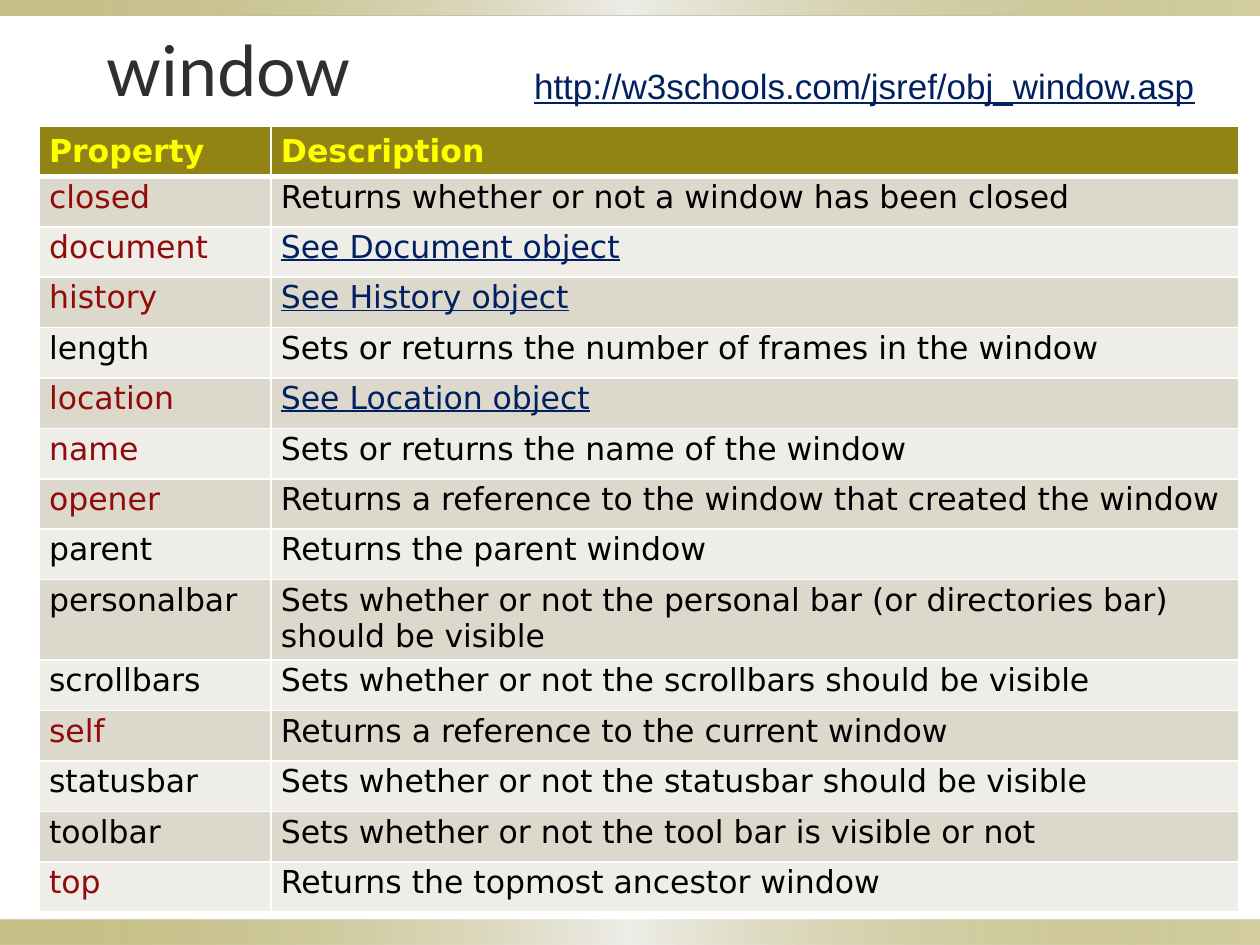
from typing import NamedTuple

from lxml.etree import SubElement
from pptx import Presentation
from pptx.dml.color import RGBColor
from pptx.enum.shapes import MSO_SHAPE
from pptx.enum.text import MSO_ANCHOR, MSO_AUTO_SIZE
from pptx.oxml import parse_xml
from pptx.oxml.ns import nsdecls, qn
from pptx.util import Inches, Pt

WIDTH, HEIGHT = 10, 7.5
ROW_HEIGHT, TALL_ROW_HEIGHT = 0.4, 0.64
COLUMN_WIDTHS = (1.84, 7.68)
COLORS = {
    "olive": "918415",
    "pale": "EEEDE8",
    "sand": "DCD9CC",
    "white": "FFFFFF",
    "yellow": "FFFF00",
    "title": "2F2F2F",
    "red": "900B09",
    "black": "000000",
    "link": "002060",
}


class Stop(NamedTuple):
    position: int
    color: str
    opacity: int


class Label(NamedTuple):
    text: str
    left: float
    top: float
    width: float
    height: float
    font: str
    size: int
    color: str
    underline: bool = False
    wrap: bool = True
    anchor: MSO_ANCHOR = MSO_ANCHOR.TOP


class Property(NamedTuple):
    name: str
    description: str
    name_color: str = "black"
    is_link: bool = False
    height: float = ROW_HEIGHT


BAND_STOPS = (Stop(0, "olive", 50), Stop(50, "pale", 100), Stop(100, "olive", 40))
BANDS = ((0, 0.12), (7.3, 0.2))

LABELS = (
    Label("window", 0.75, 0.25, 9, 0.59, "Lato", 40, "title", anchor=MSO_ANCHOR.MIDDLE),
    Label("http://w3schools.com/jsref/obj_window.asp", 4.14, 0.46, 5.48, 0.44,
          "Arial", 20, "link", underline=True, wrap=False),
)

PROPERTIES = (
    Property("closed", "Returns whether or not a window has been closed", "red"),
    Property("document", "See Document object", "red", is_link=True),
    Property("history", "See History object", "red", is_link=True),
    Property("length", "Sets or returns the number of frames in the window"),
    Property("location", "See Location object", "red", is_link=True),
    Property("name", "Sets or returns the name of the window", "red"),
    Property("opener", "Returns a reference to the window that created the window", "red"),
    Property("parent", "Returns the parent window"),
    Property("personalbar",
             "Sets whether or not the personal bar (or directories bar) should be visible",
             height=TALL_ROW_HEIGHT),
    Property("scrollbars", "Sets whether or not the scrollbars should be visible"),
    Property("self", "Returns a reference to the current window", "red"),
    Property("statusbar", "Sets whether or not the statusbar should be visible"),
    Property("toolbar", "Sets whether or not the tool bar is visible or not"),
    Property("top", "Returns the topmost ancestor window", "red"),
)


def rgb(name: str) -> RGBColor:
    return RGBColor.from_string(COLORS[name])


def style_font(font, family: str, size: int, color: str,
               bold: bool = False, underline: bool = False) -> None:
    font.name, font.size = family, Pt(size)
    font.bold, font.underline = bold, underline
    font.color.rgb = rgb(color)


def add_band(page, top: float, height: float) -> None:
    """Draw a full-width bar with a left-to-right translucent gradient."""
    band = page.shapes.add_shape(MSO_SHAPE.RECTANGLE, 0, Inches(top),
                                 Inches(WIDTH), Inches(height))
    band.shadow.inherit = False
    band.line.fill.background()
    band.fill.gradient()
    band.fill.gradient_angle = 0
    stop_list = band.fill._fill._gradFill.find(qn("a:gsLst"))
    stop_list.clear()
    for stop in BAND_STOPS:
        entry = SubElement(stop_list, qn("a:gs"), pos=str(stop.position * 1000))
        color = SubElement(entry, qn("a:srgbClr"), val=COLORS[stop.color])
        SubElement(color, qn("a:alpha"), val=str(stop.opacity * 1000))


def add_label(page, label: Label) -> None:
    box = page.shapes.add_textbox(Inches(label.left), Inches(label.top),
                                  Inches(label.width), Inches(label.height))
    frame = box.text_frame
    frame.word_wrap = label.wrap
    frame.auto_size = MSO_AUTO_SIZE.NONE if label.wrap else MSO_AUTO_SIZE.SHAPE_TO_FIT_TEXT
    frame.vertical_anchor = label.anchor
    para = frame.paragraphs[0]
    para.text = label.text
    style_font(para.font, label.font, label.size, label.color, underline=label.underline)


def set_borders(cell, top: int, bottom: int) -> None:
    properties = cell._tc.get_or_add_tcPr()
    for index, (side, points) in enumerate(zip("LRTB", (1, 1, top, bottom))):
        properties.insert(index, parse_xml(
            f'<a:ln{side} {nsdecls("a")} w="{Pt(points)}"><a:solidFill>'
            f'<a:srgbClr val="{COLORS["white"]}"/></a:solidFill></a:ln{side}>'))


def fill_cell(cell, text: str, color: str, row: int, underline: bool = False) -> None:
    is_header = row == 0
    cell.margin_left = Inches(0.08)
    cell.margin_top = cell.margin_right = cell.margin_bottom = Inches(0.02)
    cell.vertical_anchor = MSO_ANCHOR.MIDDLE if is_header else MSO_ANCHOR.TOP
    cell.fill.solid()
    cell.fill.fore_color.rgb = rgb("olive" if is_header else "sand" if row % 2 else "pale")
    set_borders(cell, top=3 if row == 1 else 1, bottom=3 if is_header else 1)
    para = cell.text_frame.paragraphs[0]
    para.text = text
    style_font(para.font, "DejaVu Sans", 18, color, is_header, underline)


def add_property_table(page) -> None:
    heights = [ROW_HEIGHT] + [entry.height for entry in PROPERTIES]
    table = page.shapes.add_table(
        len(heights), len(COLUMN_WIDTHS), Inches(0.31), Inches(1),
        Inches(sum(COLUMN_WIDTHS)), Inches(sum(heights))).table
    table.horz_banding = False
    for column, width in zip(table.columns, COLUMN_WIDTHS):
        column.width = Inches(width)
    for row, height in zip(table.rows, heights):
        row.height = Inches(height)
    for index, heading in enumerate(("Property", "Description")):
        fill_cell(table.cell(0, index), heading, "yellow", 0)
    for row, entry in enumerate(PROPERTIES, start=1):
        fill_cell(table.cell(row, 0), entry.name, entry.name_color, row)
        fill_cell(table.cell(row, 1), entry.description,
                  "link" if entry.is_link else "black", row, entry.is_link)


def main() -> None:
    deck = Presentation()
    deck.slide_width, deck.slide_height = Inches(WIDTH), Inches(HEIGHT)
    page = deck.slides.add_slide(deck.slide_layouts[6])
    for top, height in BANDS:
        add_band(page, top, height)
    add_property_table(page)
    for label in LABELS:
        add_label(page, label)
    deck.save("out.pptx")


if __name__ == "__main__":
    main()
